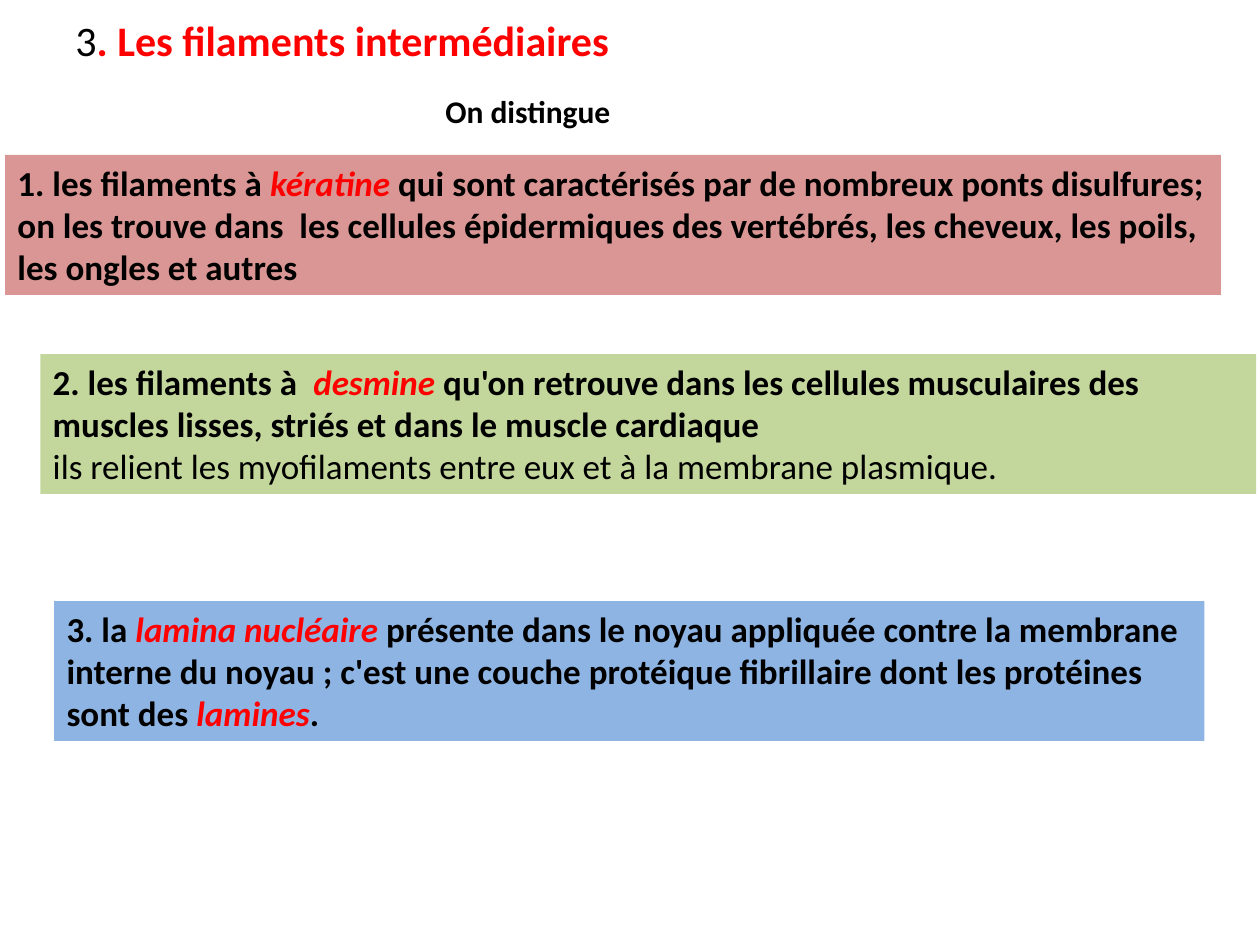
from dataclasses import dataclass

from pptx import Presentation
from pptx.dml.color import RGBColor
from pptx.enum import shapes, text
from pptx.util import Inches, Pt


@dataclass(frozen=True)
class Theme:
    """Colours, font and type sizes of the slide."""
    font: str = "Calibri"
    black: str = "000000"
    red: str = "FF0000"
    rose: str = "D99694"
    green: str = "C3D69B"
    blue: str = "8EB4E3"
    head: int = 24
    lead: int = 18
    body: int = 20


THEME = Theme()


def add_run(para, words, size, color=THEME.black, bold=True, slant=False):
    """Add one styled run to a paragraph."""
    run = para.add_run()
    run.text = words
    font = run.font
    font.name, font.size = THEME.font, Pt(size)
    font.bold, font.italic = bold, slant
    font.color.rgb = RGBColor.from_string(color)


def add_title(slide, left, top, width, height):
    """Place the numbered section title."""
    frame = slide.shapes.add_textbox(left, top, width, height).text_frame
    frame.word_wrap = True
    para = frame.paragraphs[0]
    add_run(para, "3", THEME.head, bold=False)
    add_run(para, ". Les filaments intermédiaires", THEME.head, THEME.red)


def add_lead(slide, left, top, width, height):
    """Place the centred line that leads into the list."""
    frame = slide.shapes.add_textbox(left, top, width, height).text_frame
    frame.word_wrap = False
    para = frame.paragraphs[0]
    para.alignment = text.PP_ALIGN.CENTER
    add_run(para, "On distingue", THEME.lead)


def add_panel(slide, left, top, width, height, fill, parts, note=""):
    """Place a filled panel whose every second part is a red key term."""
    panel = slide.shapes.add_shape(
        shapes.MSO_SHAPE.RECTANGLE, left, top, width, height)
    panel.shadow.inherit = False
    panel.fill.solid()
    panel.fill.fore_color.rgb = RGBColor.from_string(fill)
    panel.line.fill.background()
    frame = panel.text_frame
    frame.word_wrap = True
    frame.vertical_anchor = text.MSO_ANCHOR.TOP
    para = frame.paragraphs[0]
    para.alignment = text.PP_ALIGN.LEFT
    for index, words in enumerate(parts):
        key = index % 2 == 1
        add_run(para, words, THEME.body,
                THEME.red if key else THEME.black, slant=key)
    if note:
        para = frame.add_paragraph()
        para.alignment = text.PP_ALIGN.LEFT
        add_run(para, note, THEME.body, bold=False)


def main():
    """Build the slide and save it."""
    deck = Presentation()
    deck.slide_width, deck.slide_height = Inches(10), Inches(7.5)
    slide = deck.slides.add_slide(deck.slide_layouts[6])
    add_title(slide, Inches(0.5), Inches(0.07), Inches(9.5), Inches(0.5))
    add_lead(slide, Inches(3.43), Inches(0.68), Inches(1.52), Inches(0.4))
    panels = [
        (0.04, 1.23, 9.65, THEME.rose,
         ["1. les filaments à ", "kératine",
          " qui sont caractérisés par de nombreux ponts disulfures; on les "
          "trouve dans  les cellules épidermiques des vertébrés, les cheveux, "
          "les poils, les ongles et autres"], ""),
        (0.32, 2.81, 9.65, THEME.green,
         ["2. les filaments à  ", "desmine",
          " qu'on retrouve dans les cellules musculaires des muscles lisses, "
          "striés et dans le muscle cardiaque"],
         "ils relient les myoﬁlaments entre eux et à la membrane plasmique."),
        (0.43, 4.77, 9.13, THEME.blue,
         ["3. la ", "lamina nucléaire",
          " présente dans le noyau appliquée contre la membrane interne du "
          "noyau ; c'est une couche protéique fibrillaire dont les protéines "
          "sont des ", "lamines", "."], ""),
    ]
    for left, top, width, fill, parts, note in panels:
        add_panel(slide, Inches(left), Inches(top), Inches(width),
                  Inches(1.11), fill, parts, note)
    deck.save("out.pptx")


if __name__ == "__main__":
    main()
